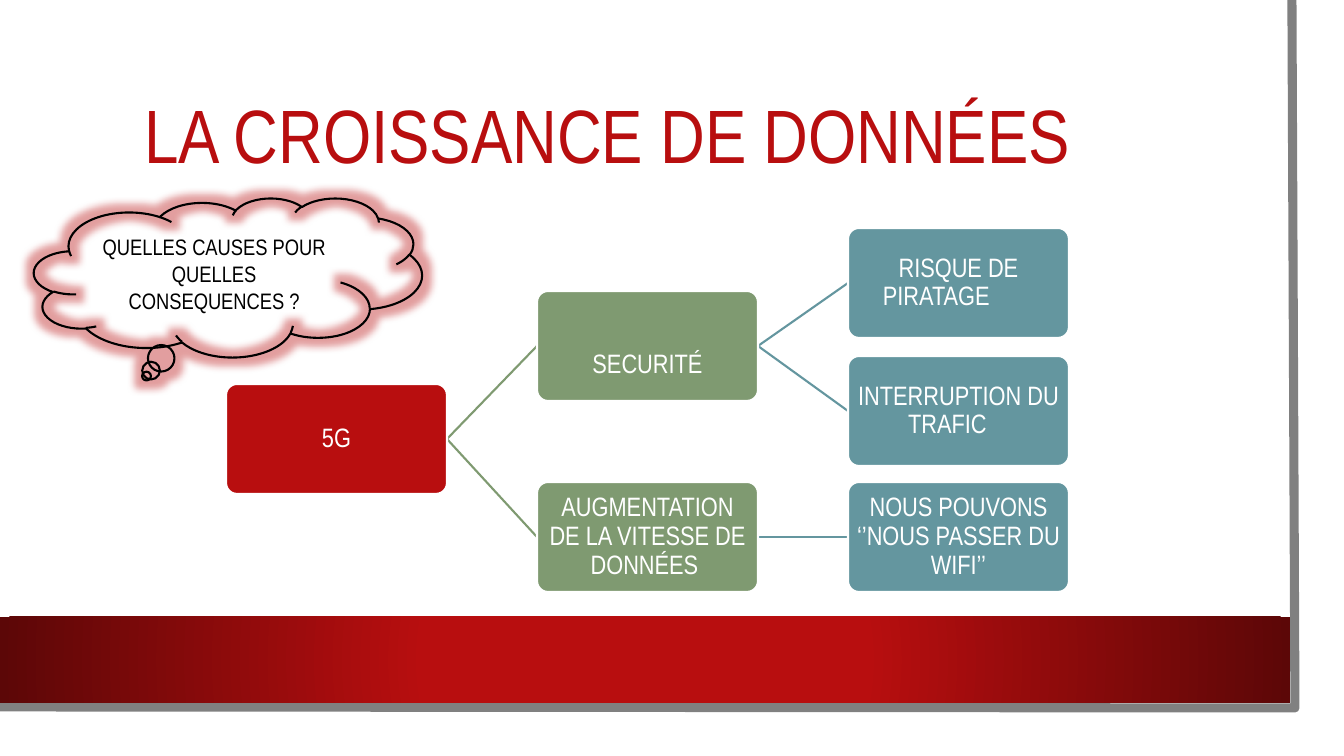
from lxml import etree
from pptx import Presentation
from pptx.dml.color import RGBColor
from pptx.enum.shapes import MSO_CONNECTOR, MSO_SHAPE
from pptx.enum.text import MSO_ANCHOR, MSO_AUTO_SIZE, PP_ALIGN
from pptx.oxml import parse_xml
from pptx.oxml.ns import qn
from pptx.util import Emu, Pt

RECT, ROUND, CLOUD = MSO_SHAPE.RECTANGLE, MSO_SHAPE.ROUNDED_RECTANGLE, MSO_SHAPE.CLOUD_CALLOUT
LINE = MSO_CONNECTOR.STRAIGHT
MID, MIDDLE = PP_ALIGN.CENTER, MSO_ANCHOR.MIDDLE
NS = 'xmlns:a="http://schemas.openxmlformats.org/drawingml/2006/main"'
SCALE = 914400 / 100.8
FONT = "Arial Narrow"
RED, DARK, GREEN, TEAL = "B80E0F", "5C0707", "7F9A71", "64969F"
WHITE, BLACK, GRAY = "FFFFFF", "000000", "808080"

TITLE = "LA CROISSANCE DE DONNÉES"
ASK = "QUELLES CAUSES POUR QUELLES CONSEQUENCES ?"
# key: (level, top, text, extra top inset); a closing tab shifts the last line left
CARDS = {
    "root": (0, 384, "5G", 0),
    "safe": (1, 291, "SECURITÉ", 38),
    "risk": (2, 228, "RISQUE DE PIRATAGE\t", 0),
    "stop": (2, 356, "INTERRUPTION DU TRAFIC\t", 0),
    "fast": (1, 482, "AUGMENTATION DE LA VITESSE DE DONNÉES ", 0),
    "wifi": (2, 482, "NOUS POUVONS ‘’NOUS PASSER DU WIFI’’", 0),
}
LINKS = [("root", "safe"), ("safe", "risk"), ("safe", "stop"),
         ("root", "fast"), ("fast", "wifi")]
FILLS = [RED, GREEN, TEAL]
LEFT, STEP, WIDE, HIGH = 226, 311, 221, 110
FRAME = [(1292, 0), (1295, 708), (-3, 707)]


def px(n):
    return Emu(round(n * SCALE))


def rgb(code):
    return RGBColor.from_string(code)


def stroke(line, code, size):
    line.color.rgb = rgb(code)
    line.width = Pt(size)


def add(kind, box, fill=None):
    shape = slide.shapes.add_shape(kind, *map(px, box))
    shape.shadow.inherit = False
    shape.line.fill.background()
    if fill:
        shape.fill.solid()
        shape.fill.fore_color.rgb = rgb(fill)
    else:
        shape.fill.background()
    return shape


def write(shape, text, size, code, inset, gap=0.9):
    """Set centred text; inset is left, top, right, bottom in px."""
    frame = shape.text_frame
    frame.word_wrap = True
    frame.auto_size = MSO_AUTO_SIZE.NONE
    frame.vertical_anchor = MIDDLE
    (frame.margin_left, frame.margin_top,
     frame.margin_right, frame.margin_bottom) = map(px, inset)
    para = frame.paragraphs[0]
    para.alignment = MID
    para.line_spacing = gap
    run = para.add_run()
    run.text = text
    run.font.name = FONT
    run.font.size = Pt(size)
    run.font.color.rgb = rgb(code)


def draw_frame():
    add(RECT, (0, 0, 1320, 733), WHITE)
    path = slide.shapes.build_freeform(*FRAME[0], scale=SCALE)
    path.add_line_segments(FRAME[1:], close=False)
    edge = path.convert_to_shape()
    edge.shadow.inherit = False
    edge.fill.background()
    stroke(edge.line, GRAY, 6.5)
    bar = add(RECT, (0, 617, 1290, 86), RED)
    props = bar._element.spPr
    props.replace(props.find(qn("a:solidFill")), parse_xml(
        f'<a:gradFill {NS} rotWithShape="1"><a:gsLst>'
        f'<a:gs pos="34000"><a:srgbClr val="{RED}"/></a:gs>'
        f'<a:gs pos="100000"><a:srgbClr val="{DARK}"/></a:gs></a:gsLst>'
        '<a:path path="circle"><a:fillToRect l="50000" t="50000" r="50000" b="50000"/>'
        '</a:path></a:gradFill>'))


def draw_title():
    title = slide.shapes.title
    title.left, title.top, title.width, title.height = map(px, (76, 76, 1146, 127))
    write(title, TITLE, 54, RED, (10, 5, 93, 5))
    slide.shapes._spTree.append(title._element)  # in front of the frame


def draw_cloud():
    cloud = add(CLOUD, (34, 198, 388, 159))
    cloud.adjustments[0], cloud.adjustments[1] = -0.21, 0.62
    stroke(cloud.line, BLACK, 1.5)
    glow = cloud._element.spPr.find(qn("a:effectLst"))
    glow.append(parse_xml(
        f'<a:glow {NS} rad="139700"><a:srgbClr val="{RED}">'
        '<a:alpha val="40000"/></a:srgbClr></a:glow>'))
    write(cloud, ASK, 16, BLACK, (10, 5, 10, 5), 1.0)


def draw_tree():
    for start, end in LINKS:
        level, top = CARDS[start][:2]
        goal, drop = CARDS[end][:2]
        ends = (LEFT + level * STEP + WIDE, top + HIGH / 2,
                LEFT + goal * STEP, drop + HIGH / 2)
        link = slide.shapes.add_connector(LINE, *map(px, ends))
        stroke(link.line, FILLS[goal], 1.5)
        etree.SubElement(link._element.spPr, qn("a:effectLst"))
    for level, top, text, extra in CARDS.values():
        card = add(ROUND, (LEFT + level * STEP, top, WIDE, HIGH), FILLS[level])
        card.adjustments[0] = 0.1
        stroke(card.line, WHITE, 1.5)
        write(card, text, 19, WHITE, (5, 5 + extra, 5, 5))


deck = Presentation()
deck.slide_width, deck.slide_height = px(1344), px(756)
slide = deck.slides.add_slide(deck.slide_layouts[5])
draw_frame()
draw_title()
draw_cloud()
draw_tree()
deck.save("out.pptx")
